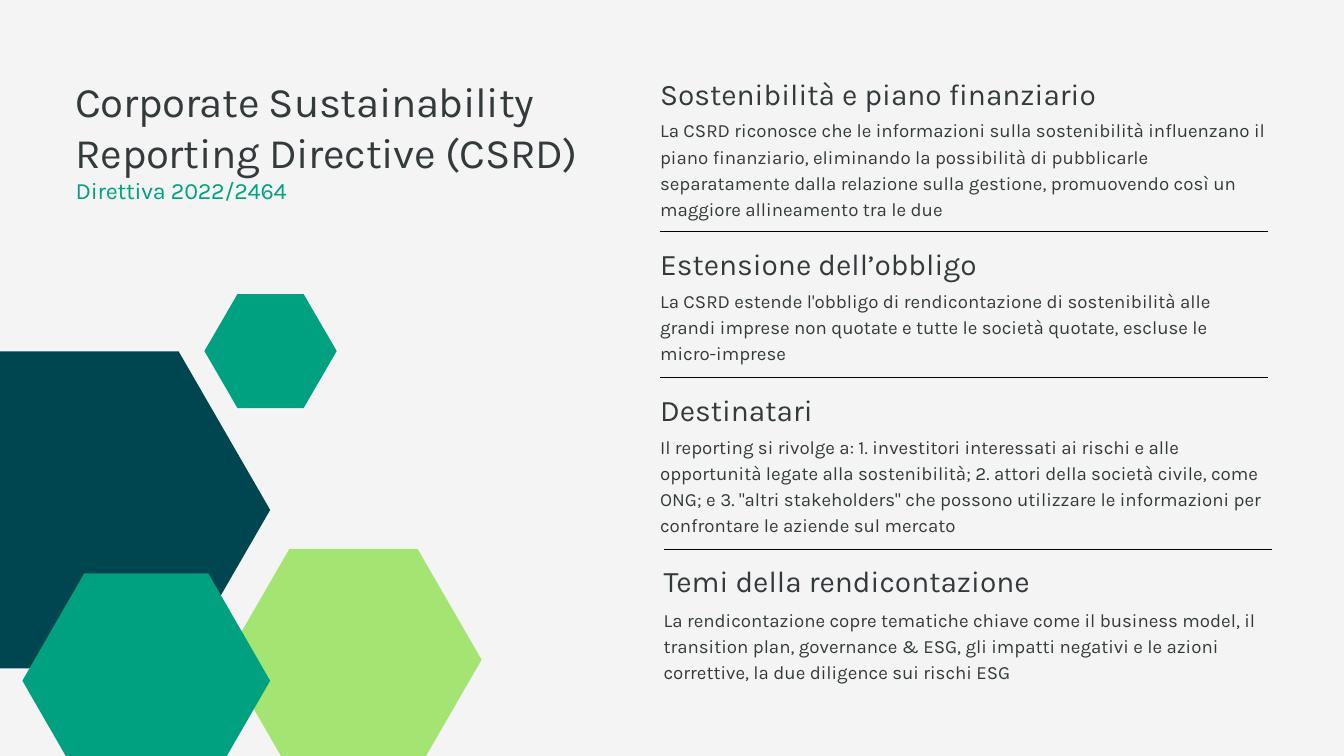
from dataclasses import dataclass

from lxml import etree
from pptx import Presentation
from pptx.dml.color import RGBColor
from pptx.enum.shapes import MSO_CONNECTOR, MSO_SHAPE
from pptx.enum.text import MSO_ANCHOR, MSO_AUTO_SIZE, PP_ALIGN
from pptx.oxml.ns import qn
from pptx.util import Emu, Pt

HEXAGON = MSO_SHAPE.HEXAGON
STRAIGHT = MSO_CONNECTOR.STRAIGHT
TOP = MSO_ANCHOR.TOP
NO_AUTOFIT = MSO_AUTO_SIZE.NONE
LEFT = PP_ALIGN.LEFT

PAPER = RGBColor(0xF4, 0xF4, 0xF4)
INK = RGBColor(0x33, 0x3A, 0x3B)
BLACK = RGBColor(0x00, 0x00, 0x00)
NAVY = RGBColor(0x00, 0x46, 0x51)
GREEN = RGBColor(0x00, 0xA1, 0x81)
LIME = RGBColor(0xA4, 0xE4, 0x73)

FONT = "Karla"
COLUMN_W = 869
HEADING_H = 52
LINE_H = 37


def px(n: int) -> Emu:
    return Emu(n * 9525)


@dataclass
class Hexagon:
    x: int
    y: int
    w: int
    h: int
    color: RGBColor


@dataclass
class Section:
    x: int
    heading_y: int
    body_y: int
    lines: int
    heading: str
    body: str
    rule_y: int | None = None


HEXAGONS = [
    Hexagon(-137, 502, 523, 453, NAVY),
    Hexagon(322, 784, 366, 317, LIME),
    Hexagon(292, 420, 189, 163, GREEN),
    Hexagon(32, 819, 354, 307, GREEN),
]

SECTIONS = [
    Section(943, 108, 165, 4, "Sostenibilità e piano finanziario",
            "La CSRD riconosce che le informazioni sulla sostenibilità influenzano il "
            "piano finanziario, eliminando la possibilità di pubblicarle separatamente "
            "dalla relazione sulla gestione, promuovendo così un maggiore allineamento "
            "tra le due"),
    Section(943, 351, 408, 3, "Estensione dell’obbligo",
            "La CSRD estende l'obbligo di rendicontazione di sostenibilità alle grandi "
            "imprese non quotate e tutte le società quotate, escluse le micro-imprese",
            rule_y=331),
    Section(943, 559, 617, 4, "Destinatari",
            "Il reporting si rivolge a: 1. investitori interessati ai rischi e alle "
            "opportunità legate alla sostenibilità; 2. attori della società civile, "
            "come ONG; e 3. \"altri stakeholders\" che possono utilizzare le "
            "informazioni per confrontare le aziende sul mercato",
            rule_y=539),
    Section(948, 804, 864, 3, "Temi della rendicontazione",
            "La rendicontazione copre tematiche chiave come il business model, il "
            "transition plan, governance & ESG, gli impatti negativi e le azioni "
            "correttive, la due diligence sui rischi ESG",
            rule_y=785),
]


def set_frame(tf) -> None:
    tf.margin_left = tf.margin_top = tf.margin_right = tf.margin_bottom = 0
    tf.word_wrap = True
    tf.auto_size = NO_AUTOFIT
    tf.vertical_anchor = TOP


def write(p, text: str, *, size: float, leading: float,
          color: RGBColor = INK, tracking: float = 0) -> None:
    p.alignment = LEFT
    p.line_spacing = Pt(leading)
    p.space_before = Pt(0)
    r = p.add_run()
    r.text = text
    r.font.name = FONT
    r.font.size = Pt(size)
    r.font.color.rgb = color
    if tracking:
        r._r.get_or_add_rPr().set("spc", str(round(tracking * 100)))


def add_text(s, x: int, y: int, h: int, text: str, **style) -> None:
    tf = s.shapes.add_textbox(px(x), px(y), px(COLUMN_W), px(h)).text_frame
    set_frame(tf)
    write(tf.paragraphs[0], text, **style)


def add_hexagon(s, item: Hexagon) -> None:
    sp = s.shapes.add_shape(HEXAGON, px(item.x), px(item.y), px(item.w), px(item.h))
    sp.adjustments[0] = item.w / 4 / item.h  # top side is half the width
    sp.shadow.inherit = False
    sp.fill.solid()
    sp.fill.fore_color.rgb = item.color
    sp.line.fill.background()


def add_rule(s, x: int, y: int) -> None:
    line = s.shapes.add_connector(STRAIGHT, px(x), px(y), px(x + COLUMN_W), px(y))
    line.line.color.rgb = BLACK
    line.line.width = Pt(0.75)
    etree.SubElement(line._element.spPr, qn("a:effectLst"))


def add_section(s, item: Section) -> None:
    if item.rule_y is not None:
        add_rule(s, item.x, item.rule_y)
    add_text(s, item.x, item.heading_y, HEADING_H, item.heading, size=32, leading=38.4)
    add_text(s, item.x, item.body_y, item.lines * LINE_H, item.body, size=20, leading=28)


def add_title(s) -> None:
    title = s.shapes.title
    title.left, title.top, title.width, title.height = px(108), px(108), px(751), px(183)
    tf = title.text_frame
    set_frame(tf)
    write(tf.paragraphs[0], "Corporate Sustainability Reporting Directive (CSRD)",
          size=45, leading=54, tracking=-0.4)
    write(tf.add_paragraph(), "Direttiva 2022/2464",
          size=25, leading=30, color=GREEN, tracking=-0.2)


def main() -> None:
    prs = Presentation()
    prs.slide_width, prs.slide_height = px(1920), px(1080)
    s = prs.slides.add_slide(prs.slide_layouts[5])
    s.background.fill.solid()
    s.background.fill.fore_color.rgb = PAPER

    # Title and subtitle
    add_title(s)

    # Hexagon cluster, back to front
    for item in HEXAGONS:
        add_hexagon(s, item)

    # Right-hand column
    for item in SECTIONS:
        add_section(s, item)

    prs.save("out.pptx")


if __name__ == "__main__":
    main()
